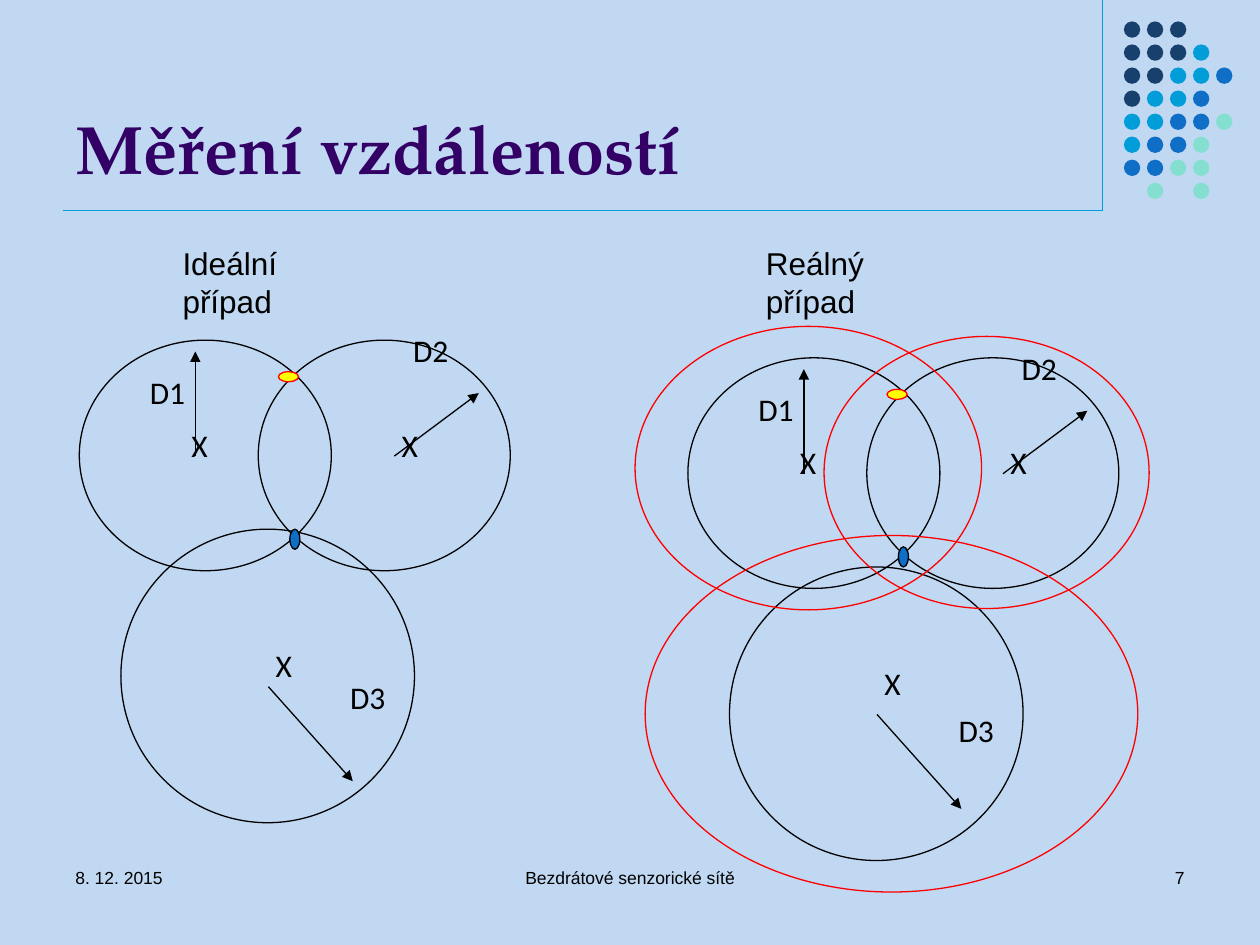
from dataclasses import dataclass

from lxml import etree
from pptx import Presentation
from pptx import util as u
from pptx.dml.color import RGBColor
from pptx.enum import shapes, text
from pptx.oxml.ns import qn


@dataclass(frozen=True)
class Theme:
    background: str = "C1D8F2"
    ink: str = "000000"
    title: str = "330066"
    navy: str = "17406D"
    cyan: str = "009DD9"
    blue: str = "0F6FC6"
    mint: str = "85DFD0"
    red: str = "FF0000"
    yellow: str = "FFFF00"
    title_font: str = "TeX Gyre Pagella"
    body_font: str = "Arial"
    label_font: str = "Calibri"
    title_size: int = 39
    body_size: int = 18
    footer_size: int = 10
    line_width: float = 0.75


class SlideBuilder:
    def __init__(self, page, theme):
        self.page = page
        self.theme = theme
        fill = page.background.fill
        fill.solid()
        fill.fore_color.rgb = RGBColor.from_string(theme.background)

    def format_text(self, box, words, font, size, color, align, bold=False):
        para = box.text_frame.paragraphs[0]
        para.text = words
        para.alignment = align
        para.font.name = font
        para.font.size = u.Pt(size)
        para.font.bold = bold
        para.font.color.rgb = RGBColor.from_string(color)

    def title(self, words, left, top, width, height):
        box = self.page.shapes.title
        box.left, box.top = u.Inches(left), u.Inches(top)
        box.width, box.height = u.Inches(width), u.Inches(height)
        frame = box.text_frame
        frame.auto_size = text.MSO_AUTO_SIZE.NONE
        frame.vertical_anchor = text.MSO_ANCHOR.BOTTOM
        self.format_text(box, words, self.theme.title_font, self.theme.title_size,
                         self.theme.title, text.PP_ALIGN.LEFT, bold=True)

    def text(self, words, left, top, width, height, font=None, size=None,
             align=text.PP_ALIGN.LEFT, wrap=True):
        box = self.page.shapes.add_textbox(
            u.Inches(left), u.Inches(top), u.Inches(width), u.Inches(height))
        box.text_frame.word_wrap = wrap
        self.format_text(box, words, font or self.theme.body_font,
                         size or self.theme.body_size, self.theme.ink, align)

    def label(self, words, left, top):
        width = 0.33 if len(words) == 1 else 0.48
        self.text(words, left, top, width, 0.4, self.theme.label_font, wrap=False)

    def ellipse(self, left, top, width, height, fill=None, line=None):
        oval = self.page.shapes.add_shape(
            shapes.MSO_SHAPE.OVAL,
            u.Inches(left), u.Inches(top), u.Inches(width), u.Inches(height))
        oval.shadow.inherit = False
        if fill:
            oval.fill.solid()
            oval.fill.fore_color.rgb = RGBColor.from_string(fill)
        else:
            oval.fill.background()
        if line:
            oval.line.color.rgb = RGBColor.from_string(line)
            oval.line.width = u.Pt(self.theme.line_width)
        else:
            oval.line.fill.background()

    def line(self, x1, y1, x2, y2, color, arrow=False):
        connector = self.page.shapes.add_connector(
            shapes.MSO_CONNECTOR.STRAIGHT,
            u.Inches(x1), u.Inches(y1), u.Inches(x2), u.Inches(y2))
        connector.line.color.rgb = RGBColor.from_string(color)
        connector.line.width = u.Pt(self.theme.line_width)
        if arrow:
            outline = connector.line._get_or_add_ln()
            etree.SubElement(outline, qn("a:tailEnd"), type="triangle")
        etree.SubElement(connector._element.spPr, qn("a:effectLst"))


def draw_dots(slide):
    theme = slide.theme
    colors = {"n": theme.navy, "c": theme.cyan, "b": theme.blue, "m": theme.mint}
    rows = ["nnn", "nnnc", "nnccb", "nccb", "ccbbm", "cbbm", "bbmm", " m m"]
    pitch = 1.28 / 7
    for row, codes in enumerate(rows):
        for column, code in enumerate(codes):
            if code in colors:
                slide.ellipse(8.92 + column * pitch, 0.17 + row * pitch,
                              0.13, 0.13, fill=colors[code])


def draw_case(slide, dx=0, dy=0, circle_drop=0, arrow_drop=0, label_drop=0):
    """Three range circles; the drops move parts of the lowest one further down."""
    theme = slide.theme
    # Range circles
    for left, top, width, height in [(0.63, 2.7, 2, 1.83), (2.05, 2.7, 2, 1.83),
                                     (0.96, 4.2 + circle_drop, 2.33, 2.33)]:
        slide.ellipse(left + dx, top + dy, width, height, line=theme.ink)
    # Radius arrows
    for x1, y1, x2, y2 in [(3.13, 3.62, 3.8, 3.12), (1.55, 3.62, 1.55, 2.79),
                           (2.13, 5.45 + arrow_drop, 2.8, 6.2 + arrow_drop)]:
        slide.line(x1 + dx, y1 + dy, x2 + dx, y2 + dy, theme.ink, arrow=True)
    # Intersection markers and labels
    slide.ellipse(2.3 + dx, 4.2 + dy, 0.08, 0.16, theme.blue, theme.ink)
    for words, left, top in [("X", 1.42, 3.33), ("X", 3.09, 3.33), ("X", 2.09, 5.08),
                             ("D1", 1.09, 2.91), ("D2", 3.18, 2.58),
                             ("D3", 2.68, 5.33 + label_drop)]:
        slide.label(words, left + dx, top + dy)
    slide.ellipse(2.21 + dx, 2.95 + dy, 0.16, 0.08, theme.yellow, theme.red)


def main():
    deck = Presentation()
    deck.slide_width, deck.slide_height = u.Inches(10), u.Inches(7.5)
    theme = Theme()
    slide = SlideBuilder(deck.slides.add_slide(deck.slide_layouts[5]), theme)

    # Frame lines, dot ornament and title
    slide.line(8.75, 0, 8.75, 1.67, theme.cyan)
    draw_dots(slide)
    slide.line(0.5, 1.67, 8.75, 1.67, theme.cyan)
    slide.title("Měření vzdáleností", 0.5, 0.13, 8.25, 1.41)

    # Footer
    for words, left, width, align in [
            ("8. 12. 2015", 0.5, 2.33, text.PP_ALIGN.LEFT),
            ("Bezdrátové senzorické sítě", 3.42, 3.16, text.PP_ALIGN.CENTER),
            ("7", 7.17, 2.33, text.PP_ALIGN.RIGHT)]:
        slide.text(words, left, 6.83, width, 0.5, size=theme.footer_size, align=align)

    # Ideal case
    draw_case(slide)
    slide.text("Ideální případ", 1.35, 1.89, 1.65, 0.38)

    # Real case with measurement error in red
    draw_case(slide, dx=4.83, dy=0.14, circle_drop=0.16, arrow_drop=0.08, label_drop=0.12)
    for bounds in [(6.54, 2.67, 2.58, 2.16), (5.04, 2.59, 2.75, 2.25),
                   (5.12, 4.25, 3.91, 2.83)]:
        slide.ellipse(*bounds, line=theme.red)
    slide.text("Reálný případ", 5.98, 1.89, 1.65, 0.38)

    deck.save("out.pptx")


if __name__ == "__main__":
    main()
